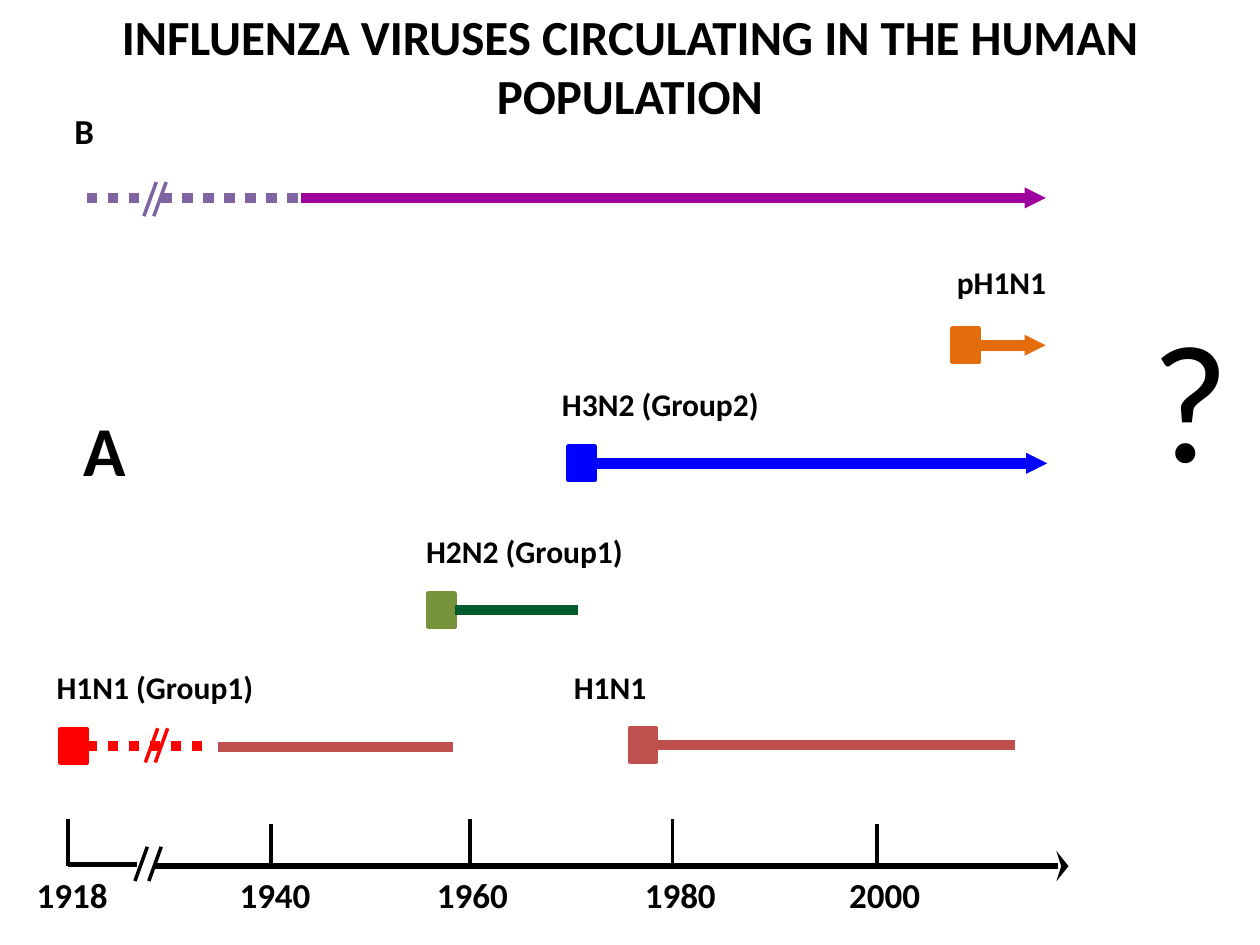
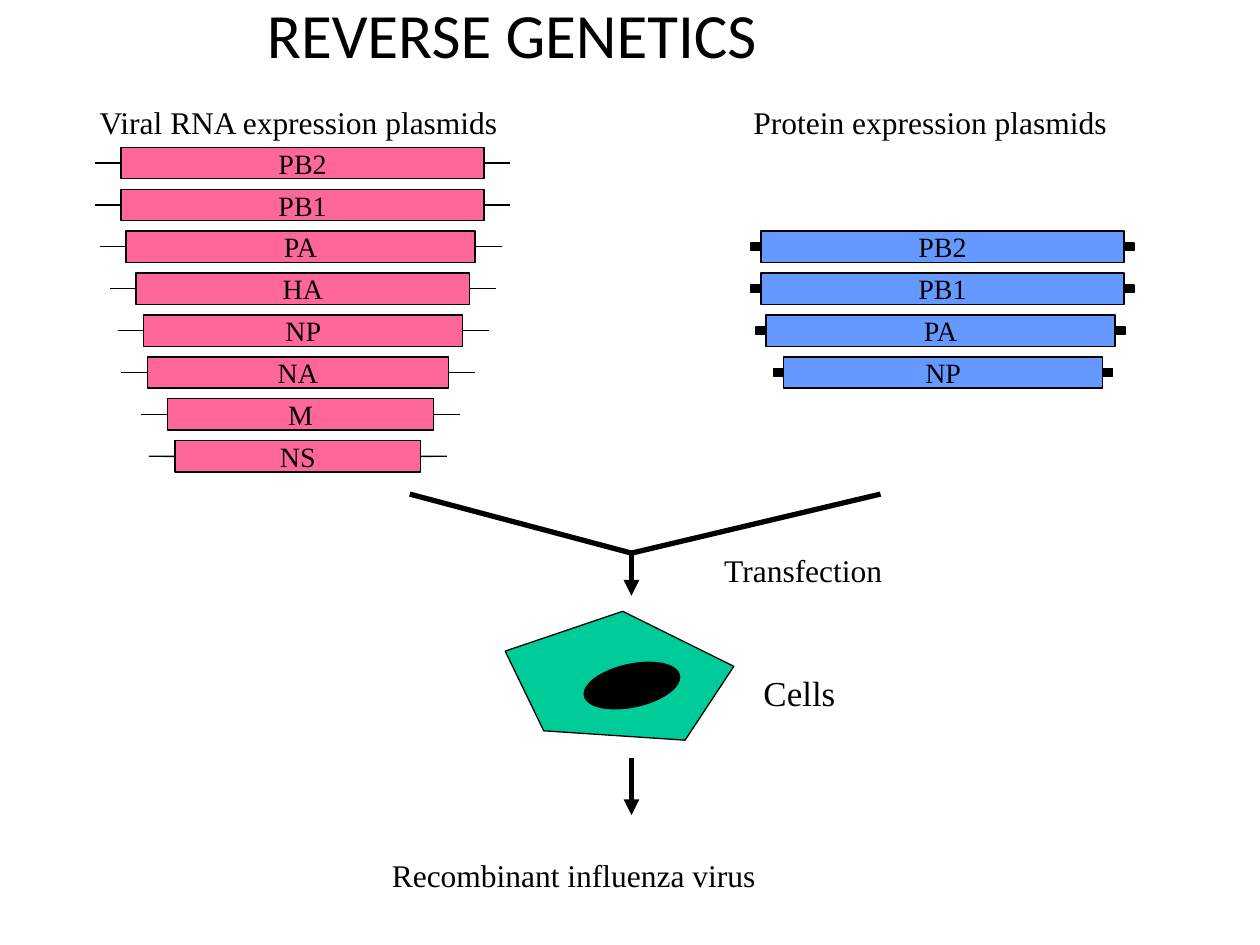
from lxml import etree
from pptx import Presentation
from pptx import util as u
from pptx.dml.color import RGBColor
from pptx.enum import dml, shapes, text
from pptx.oxml.ns import qn

Cm, Pt = u.Cm, u.Pt
BLACK, PURPLE, BRICK, RED = "000000", "8064A2", "C0504D", "FF0000"
SANS, SERIF = "Calibri", "Times New Roman"

TIMELINE_TITLE = "INFLUENZA VIRUSES CIRCULATING IN THE HUMAN POPULATION"
# label, label left, label top, box left, lane middle, line end, box colour, line colour, style
STRAINS = [
    ("pH1N1", 19.29, 5.3, 19.2, 6.96, 21.08, "E46C0A", "E46C0A", "arrow"),
    ("H3N2 (Group2)", 11.33, 7.77, 11.46, 9.34, 21.11, "0000FF", "0000FF", "arrow"),
    ("H2N2 (Group1)", 8.59, 10.72, 8.64, 12.3, 11.66, "77933C", "005B2D", "plain"),
    ("H1N1 (Group1)", 1.14, 13.46, 1.22, 15.04, 4.19, RED, RED, "dotted"),
    ("H1N1", 11.57, 13.46, 12.7, 15.02, 20.47, BRICK, BRICK, "plain"),
]
BOX_WIDTH, BOX_HEIGHT = 0.53, 0.68
# start, end, y, colour, style
FREE_LINES = [
    (1.75, 2.97, 3.99, PURPLE, "dotted"),
    (3.25, 6.22, 3.99, PURPLE, "dotted"),
    (6.07, 21.08, 3.99, "9E009E", "arrow"),
    (4.39, 9.14, 15.06, BRICK, "plain"),
]
# left slash x, top, gap, colour
BREAKS = [(3.15, 3.67, 0.2, PURPLE), (3.18, 14.68, 0.2, RED), (2.97, 17.07, 0.28, BLACK)]
# year, tick x, tick top, label left
YEARS = [
    ("1918", 1.37, 16.51, 0.74),
    ("1940", 5.46, 16.61, 4.83),
    ("1960", 9.47, 16.51, 8.81),
    ("1980", 13.56, 16.51, 13.0),
    ("2000", 17.68, 16.61, 17.12),
]
AXIS_Y = 17.46
# wording, left, top, width, size, bold
TYPE_LETTERS = [
    ("B", 1.5, 2.21, 0.8, 20, True),
    ("A", 1.68, 8.2, 1.2, 40, True),
    ("?", 23.22, 5.94, 2.1, 96, False),
]

GENETICS_TITLE = "REVERSE GENETICS"
GENE_WIDTHS = {"PB2": 7.32, "PB1": 7.32, "PA": 7.04, "HA": 6.73,
               "NP": 6.43, "NA": 6.07, "M": 5.36, "NS": 4.95}
RNA_PLASMIDS = {"PB2": 2.44, "PB1": 2.44, "PA": 2.74 - 0.2, "HA": 2.74,
                "NP": 2.9, "NA": 2.97, "M": 3.38, "NS": 3.53}
PROTEIN_PLASMIDS = {"PB2": 15.34, "PB1": 15.34, "PA": 15.44, "NP": 15.8}
FIRST_ROW, ROW_PITCH, GENE_HEIGHT = 2.97, 0.845, 0.63
STUB = 0.53
TAB_WIDTH, TAB_HEIGHT = 0.2, 0.15
# wording, left, top, width, size
CAPTIONS = [
    ("Viral RNA expression plasmids", 2.01, 2.08, 8.8, 18),
    ("Protein expression plasmids", 15.19, 2.08, 8, 18),
    ("Transfection", 14.6, 11.1, 4.5, 18),
    ("Cells", 15.39, 13.54, 2, 20),
    ("Recombinant influenza virus", 7.9, 17.25, 9, 18),
]
CENTRE_X = 12.73
# x1, y1, x2, y2, head
FLOW = [
    (8.26, 9.96, CENTRE_X, 11.15, None),
    (17.75, 9.96, CENTRE_X, 11.15, None),
    (CENTRE_X, 11.13, CENTRE_X, 12.01, ("triangle", "med", "med")),
    (CENTRE_X, 15.29, CENTRE_X, 16.43, ("triangle", "med", "med")),
]


def colour(value):
    return RGBColor.from_string(value)


def write(frame, words, size, font, bold=False, align=text.PP_ALIGN.LEFT,
          anchor=text.MSO_ANCHOR.TOP):
    frame.margin_left = frame.margin_right = frame.margin_top = frame.margin_bottom = 0
    frame.word_wrap = True
    frame.auto_size = text.MSO_AUTO_SIZE.NONE
    frame.vertical_anchor = anchor
    para = frame.paragraphs[0]
    para.alignment = align
    span = para.add_run()
    span.text = words
    span.font.name = font
    span.font.size = Pt(size)
    span.font.bold = bold
    span.font.color.rgb = colour(BLACK)


def add_label(page, words, left, top, width, size, font, bold=False):
    box = page.shapes.add_textbox(Cm(left), Cm(top), Cm(width), Cm(size * 0.0435))
    write(box.text_frame, words, size, font, bold)


def add_page(deck, title, left, top, width, height, size, bold, align):
    page = deck.slides.add_slide(deck.slide_layouts[5])
    box = page.shapes.title
    box.left, box.top, box.width, box.height = Cm(left), Cm(top), Cm(width), Cm(height)
    write(box.text_frame, title, size, SANS, bold, align, text.MSO_ANCHOR.MIDDLE)
    return page


def add_block(page, kind, left, top, width, height, fill, line=BLACK, weight=0.75, turn=0):
    block = page.shapes.add_shape(kind, Cm(left), Cm(top), Cm(width), Cm(height))
    block.shadow.inherit = False
    block.fill.solid()
    block.fill.fore_color.rgb = colour(fill)
    block.line.color.rgb = colour(line)
    block.line.width = Pt(weight)
    block.rotation = turn
    return block


def add_line(page, x1, y1, x2, y2, line, weight, dotted=False, head=None):
    connector = page.shapes.add_connector(
        shapes.MSO_CONNECTOR.STRAIGHT, Cm(x1), Cm(y1), Cm(x2), Cm(y2))
    connector.line.color.rgb = colour(line)
    connector.line.width = Pt(weight)
    if dotted:
        connector.line.dash_style = dml.MSO_LINE.ROUND_DOT
    properties = connector.element.spPr
    if head:
        kind, width, length = head
        etree.SubElement(properties.find(qn("a:ln")), qn("a:tailEnd"),
                         type=kind, w=width, len=length)
    etree.SubElement(properties, qn("a:effectLst"))
    return connector


def add_span(page, start, end, y, line, style):
    head = ("triangle", "sm", "sm") if style == "arrow" else None
    return add_line(page, start, y, end, y, line, 6, style == "dotted", head)


def build_timeline(deck):
    page = add_page(deck, TIMELINE_TITLE, 0, 0.13, 25.4, 2.39, 28, True, text.PP_ALIGN.CENTER)
    for label, left, top, box_left, middle, end, fill, line, style in STRAINS:
        add_label(page, label, left, top, 4.5, 18, SANS, True)
        box = add_block(page, shapes.MSO_SHAPE.RECTANGLE, box_left, middle - BOX_HEIGHT / 2,
                        BOX_WIDTH, BOX_HEIGHT, fill, fill, 2.5)
        add_span(page, box_left + BOX_WIDTH, end, middle, line, style).begin_connect(box, 3)
    for free_line in FREE_LINES:
        add_span(page, *free_line)
    for year, x, top, left in YEARS:
        add_line(page, x, top, x, AXIS_Y, BLACK, 2)
        add_label(page, year, left, 17.6, 1.6, 20, SANS, True)
    add_line(page, YEARS[0][1], 17.42, 2.77, 17.42, BLACK, 3)
    add_line(page, 3.1, AXIS_Y, 21.54, AXIS_Y, BLACK, 3.5, head=("stealth", "lg", "sm"))
    for x, top, gap, line in BREAKS:
        for slash in (x, x + gap):
            add_line(page, slash, top, slash - 0.25, top + 0.69, line, 2)
    for words, left, top, width, size, bold in TYPE_LETTERS:
        add_label(page, words, left, top, width, size, SANS, bold)


def add_genes(page, lefts, first_row, fill):
    for row, (gene, left) in enumerate(lefts.items(), first_row):
        top = FIRST_ROW + row * ROW_PITCH
        width = GENE_WIDTHS[gene]
        bar = add_block(page, shapes.MSO_SHAPE.RECTANGLE, left, top, width, GENE_HEIGHT, fill)
        write(bar.text_frame, gene, 16, SERIF, align=text.PP_ALIGN.CENTER,
              anchor=text.MSO_ANCHOR.MIDDLE)
        yield bar, left, left + width, top + GENE_HEIGHT / 2


def build_genetics(deck):
    page = add_page(deck, GENETICS_TITLE, 5.38, 0, 13, 1.33, 36, False, text.PP_ALIGN.LEFT)
    for bar, left, right, middle in add_genes(page, RNA_PLASMIDS, 0, "FF6699"):
        add_line(page, left - STUB, middle, left, middle, BLACK, 0.75).end_connect(bar, 1)
        add_line(page, right, middle, right + STUB, middle, BLACK, 0.75).begin_connect(bar, 3)
    for bar, left, right, middle in add_genes(page, PROTEIN_PLASMIDS, 2, "6699FF"):
        for tab_left in (left - TAB_WIDTH, right):
            add_block(page, shapes.MSO_SHAPE.RECTANGLE, tab_left, middle - TAB_HEIGHT / 2,
                      TAB_WIDTH, TAB_HEIGHT, BLACK)
    for x1, y1, x2, y2, head in FLOW:
        add_line(page, x1, y1, x2, y2, BLACK, 3, head=head)
    add_block(page, shapes.MSO_SHAPE.REGULAR_PENTAGON, 10.16, 12.32, 4.62, 2.51,
              "00CC99", turn=3.8)
    add_block(page, shapes.MSO_SHAPE.OVAL, 11.76, 13.39, 1.96, 0.86, BLACK, turn=347.7)
    for words, left, top, width, size in CAPTIONS:
        add_label(page, words, left, top, width, size, SERIF)


def main():
    deck = Presentation()
    deck.slide_width, deck.slide_height = Cm(25.4), Cm(19.05)
    build_timeline(deck)
    build_genetics(deck)
    deck.save("out.pptx")


if __name__ == "__main__":
    main()
